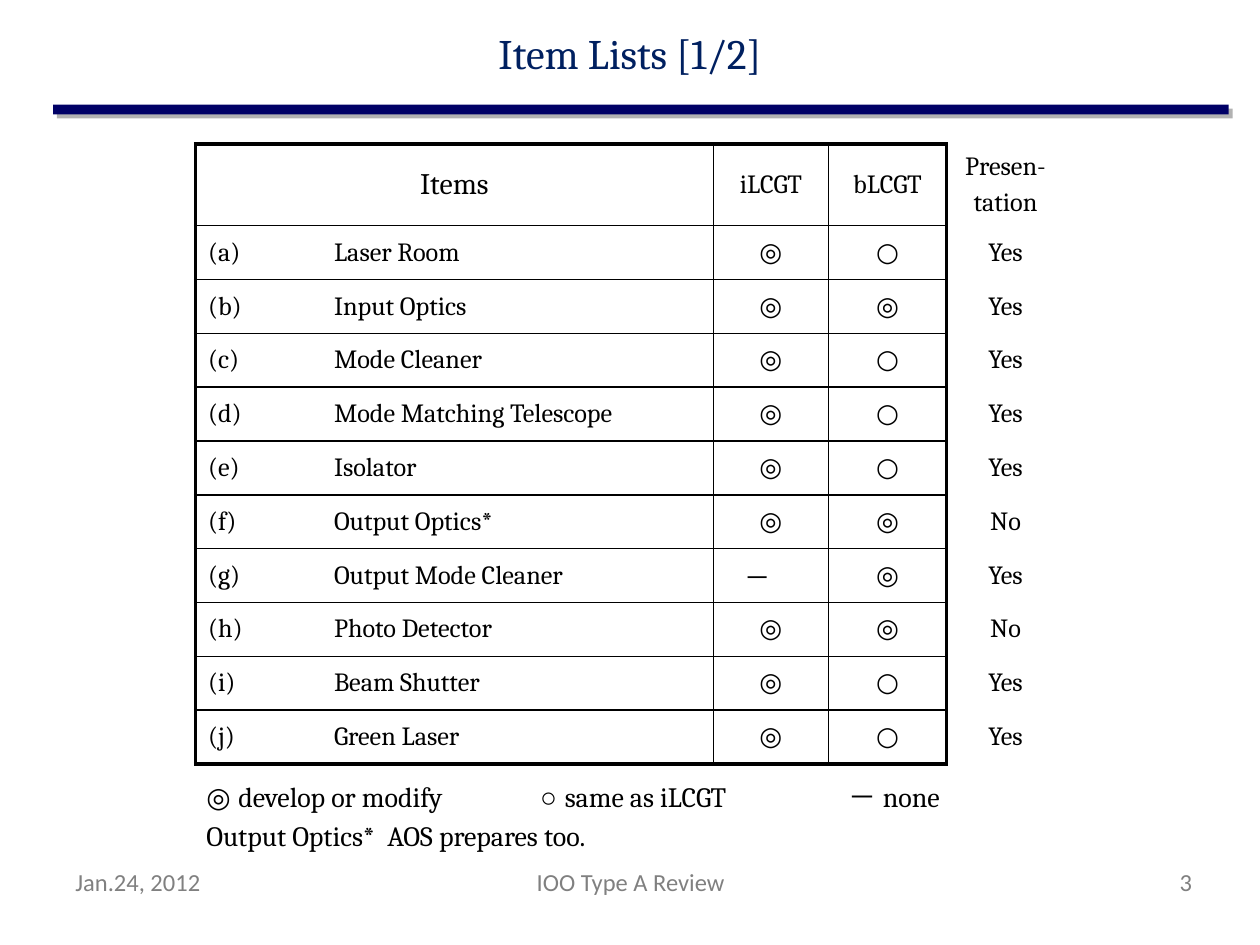
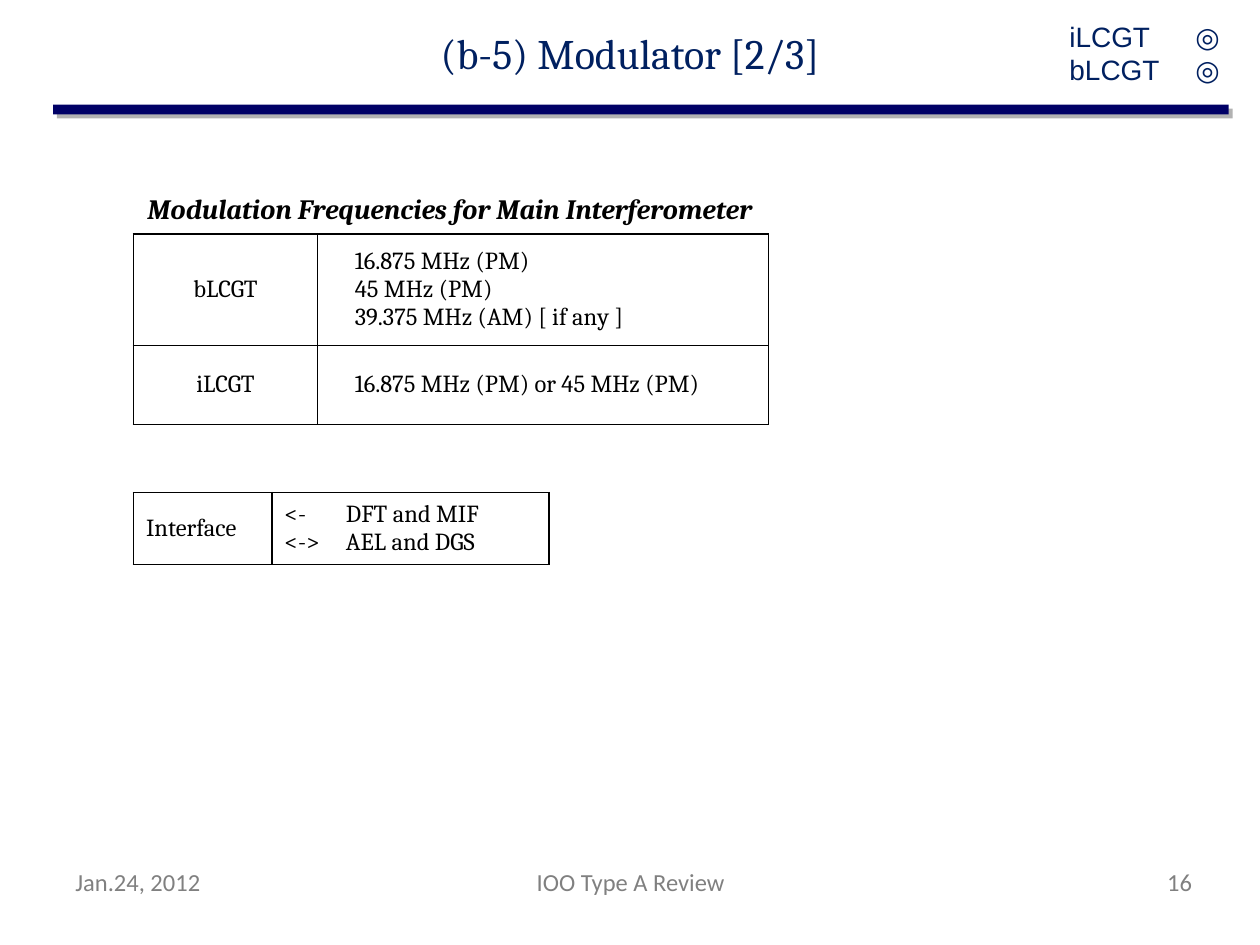
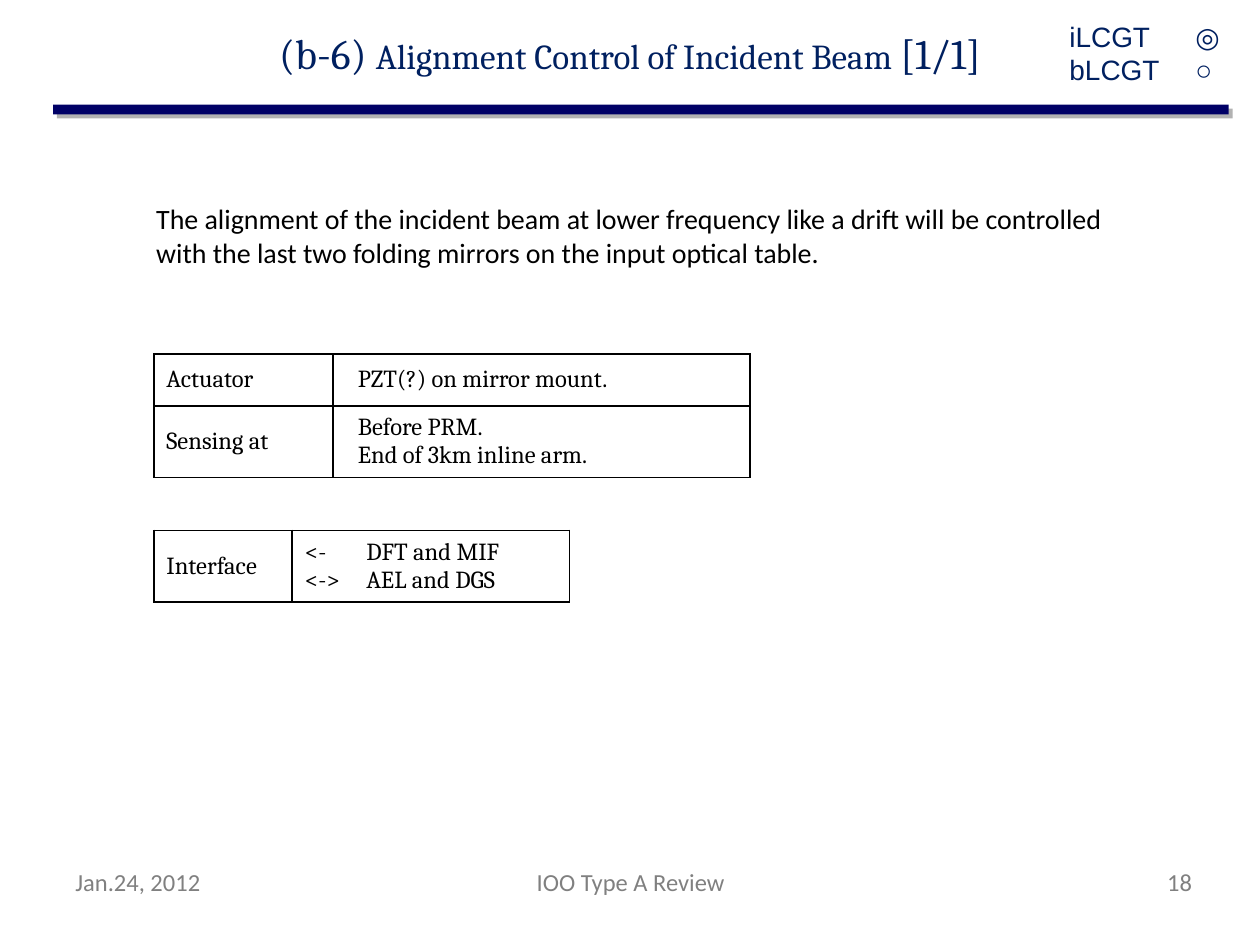
import dataclasses
import typing

import lxml.etree
import pptx
import pptx.dml.color
import pptx.enum.shapes
import pptx.enum.text
import pptx.oxml.ns
import pptx.util

Cm = pptx.util.Cm
Align = pptx.enum.text.PP_ALIGN
Anchor = pptx.enum.text.MSO_ANCHOR
qn = pptx.oxml.ns.qn


@dataclasses.dataclass(frozen=True)
class Theme:
    """Colours, fonts and type sizes of the whole deck."""
    navy: str = "002060"
    band: str = "000066"
    band_shadow: str = "B2B2B2"
    ink: str = "000000"
    muted: str = "808080"
    serif: str = "Cambria"
    sans: str = "Calibri"
    badge_font: str = "Arial"
    title: int = 24
    long_title: int = 20
    items_head: int = 17
    items: int = 15
    body: int = 16
    cell: int = 14
    footer: int = 14
    thin: float = 1
    thick: float = 2.25


class Box(typing.NamedTuple):
    """A rectangle in centimetres."""
    left: float
    top: float
    width: float
    height: float

    def sub(self, dx, dy, width, height):
        """Return a box placed from this box's top left corner."""
        return Box(self.left + dx, self.top + dy, width, height)

    def lengths(self):
        """Return the four measures as lengths."""
        return [Cm(value) for value in self]


THEME = Theme()
PAGE = Box(0, 0, 25.4, 19.05)
HEADER = PAGE.sub(0, 0, 25.4, 2.13)
FOOTER = PAGE.sub(1.27, 17.35, 23.01, 1.32)

DEVELOP, SAME, NONE = "◎", "○", "－　"
ITEMS = [
    ("(a)\tLaser Room", DEVELOP, SAME, "Yes"),
    ("(b)\tInput Optics", DEVELOP, DEVELOP, "Yes"),
    ("(c)\tMode Cleaner", DEVELOP, SAME, "Yes"),
    ("(d)\tMode Matching Telescope", DEVELOP, SAME, "Yes"),
    ("(e)\tIsolator", DEVELOP, SAME, "Yes"),
    ("(f)\tOutput Optics*", DEVELOP, DEVELOP, "No"),
    ("(g)\tOutput Mode Cleaner", NONE, DEVELOP, "Yes"),
    ("(h)\tPhoto Detector", DEVELOP, DEVELOP, "No"),
    ("(i)\tBeam Shutter", DEVELOP, SAME, "Yes"),
    ("(j)\tGreen Laser", DEVELOP, SAME, "Yes"),
]


def rgb(value):
    """Return a colour object for a hex string."""
    return pptx.dml.color.RGBColor.from_string(value)


def write(frame, text, size=THEME.cell, font=THEME.serif, color=THEME.ink, bold=False,
          italic=False, align=Align.LEFT, indent=0, tabs=(), gap=0):
    """Fill a frame with lines, each a string or a list of (text, overrides) runs."""
    lines = text if isinstance(text, list) else [text]
    for number, line in enumerate(lines):
        paragraph = frame.add_paragraph() if number else frame.paragraphs[0]
        paragraph.alignment = align
        if number and gap:
            paragraph.space_before = pptx.util.Pt(gap)
        properties = paragraph._p.get_or_add_pPr()
        if indent:
            properties.set("marL", str(Cm(indent)))
            properties.set("indent", "0")
        if tabs:
            stops = lxml.etree.SubElement(properties, qn("a:tabLst"))
            for stop in tabs:
                lxml.etree.SubElement(stops, qn("a:tab"), pos=str(Cm(stop)), algn="l")
        for words, changes in [(line, {})] if isinstance(line, str) else line:
            run = paragraph.add_run()
            run.text = words
            run.font.size = pptx.util.Pt(changes.get("size", size))
            run.font.name = changes.get("font", font)
            run.font.color.rgb = rgb(color)
            run.font.bold = bold
            run.font.italic = italic


def add_text(slide, box, text, anchor=Anchor.TOP, **style):
    """Add a wrapping text box."""
    frame = slide.shapes.add_textbox(*box.lengths()).text_frame
    frame.word_wrap = True
    frame.vertical_anchor = anchor
    write(frame, text, **style)


def add_bar(slide, box, color):
    """Add a plain filled rectangle."""
    bar = slide.shapes.add_shape(pptx.enum.shapes.MSO_SHAPE.RECTANGLE, *box.lengths())
    bar.shadow.inherit = False
    bar.fill.solid()
    bar.fill.fore_color.rgb = rgb(color)
    bar.line.fill.background()


def set_borders(cell, widths):
    """Draw the left, right, top and bottom lines of a cell, zero for none."""
    properties = cell._tc.get_or_add_tcPr()
    for position, (side, width) in enumerate(zip("LRTB", widths)):
        line = lxml.etree.Element(qn(f"a:ln{side}"), w=str(pptx.util.Pt(width)))
        if width:
            fill = lxml.etree.SubElement(line, qn("a:solidFill"))
            lxml.etree.SubElement(fill, qn("a:srgbClr"), val=THEME.ink)
        else:
            lxml.etree.SubElement(line, qn("a:noFill"))
        properties.insert(position, line)


def add_grid(slide, box, widths, heights, rows, style_of, borders_of):
    """Add a table whose cell styles and borders follow from row and column."""
    table = slide.shapes.add_table(len(rows), len(widths), *box.lengths()).table
    table.first_row = table.horz_banding = False
    for column, width in zip(table.columns, widths):
        column.width = Cm(width)
    for row, height in zip(table.rows, heights):
        row.height = Cm(height)
    for r, texts in enumerate(rows):
        for c, text in enumerate(texts):
            cell = table.cell(r, c)
            cell.vertical_anchor = Anchor.MIDDLE
            cell.fill.background()
            set_borders(cell, borders_of(r, c))
            write(cell.text_frame, text, **style_of(r, c))


def add_items_table(slide, box):
    """Add the item list with its unframed presentation column."""
    rows = [("Items", "iLCGT", "bLCGT", ["Presen-", "tation"])] + ITEMS
    marks = [2.32, 2.38, 2.38]
    head = 1.65
    last = len(rows) - 1

    def style_of(r, c):
        if r and c == 0:
            return dict(size=THEME.items, tabs=[2.54])
        size = THEME.items if r or c else THEME.items_head
        return dict(size=size, align=Align.CENTER, gap=3)

    def borders_of(r, c):
        if c == 3:
            return THEME.thick, 0, 0, 0
        return (THEME.thin if c else THEME.thick, THEME.thick if c == 2 else THEME.thin,
                THEME.thin if r else THEME.thick, THEME.thick if r == last else THEME.thin)

    add_grid(slide, box, [box.width - sum(marks)] + marks,
             [head] + [(box.height - head) / last] * last, rows, style_of, borders_of)


def add_legend(slide, box):
    """Explain the marks and the asterisk."""
    symbol = dict(font=THEME.badge_font)
    add_text(slide, box.sub(0, 0, box.width, 0.94),
             [[("◎ ", symbol), ("develop or modify", {}), ("\t○ ", symbol),
               ("same as iLCGT\t", {}), ("－ ", symbol), ("none", {})]],
             size=THEME.body, tabs=[6.73, 12.95])
    add_text(slide, box.sub(0, 0.78, 9.65, 0.94), "Output Optics*\tAOS prepares too.",
             size=THEME.body, tabs=[3.65])


def add_facts(slide, box, label_width, heights, rows, label_style, fact_style):
    """Add a thin-lined table of labels and facts."""
    add_grid(slide, box, [label_width, box.width - label_width], heights, rows,
             lambda r, c: fact_style if c else label_style,
             lambda r, c: [THEME.thin] * 4)


def add_interface(slide, box):
    """Add the table of interfacing groups."""
    add_facts(slide, box, 2.79, [box.height],
              [("Interface", ["<-\tDFT and MIF", "<->\tAEL and DGS"])],
              {}, dict(tabs=[1.24]))


def add_header(slide, box, title, marks):
    """Add the title, the band below it and the status badge."""
    band = box.sub(1.07, box.height - 0.02, 23.7, 0.2)
    add_bar(slide, band.sub(0.08, 0.08, band.width, band.height), THEME.band_shadow)
    add_bar(slide, band, THEME.band)
    add_text(slide, box, title, Anchor.MIDDLE, size=THEME.title, color=THEME.navy,
             align=Align.CENTER)
    if marks:
        add_text(slide, box.sub(21.31, 0, 4.09, box.height),
                 [f"{phase}\t{mark}" for phase, mark in zip(("iLCGT", "bLCGT"), marks)],
                 Anchor.MIDDLE, size=THEME.body, font=THEME.badge_font, color=THEME.navy)


def add_footer(slide, box, number):
    """Add the date, the review name and the page number."""
    for left, width, text, align in [
        (0, 5.92, "Jan.24, 2012", Align.LEFT),
        (7.42, 8.05, "IOO Type A Review", Align.CENTER),
        (box.width - 2.11, 2.11, str(number), Align.RIGHT),
    ]:
        add_text(slide, box.sub(left, 0, width, box.height), text, size=THEME.footer,
                 font=THEME.sans, color=THEME.muted, align=align)


def start_slide(deck, title, number, marks=()):
    """Add a slide with everything the slides share."""
    slide = deck.slides.add_slide(deck.slide_layouts[6])
    add_header(slide, HEADER, title, marks)
    add_footer(slide, FOOTER, number)
    return slide


def build_item_list(deck, box):
    """Build the item list slide."""
    slide = start_slide(deck, "Item Lists [1/2]", 3)
    add_items_table(slide, box.sub(3.94, 2.9, 17.52, 12.5))
    add_legend(slide, box.sub(3.91, 15.6, 15.6, 1.72))


def build_modulator(deck, box):
    """Build the modulation frequency slide."""
    slide = start_slide(deck, "(b-5) Modulator [2/3]", 16, (DEVELOP, DEVELOP))
    add_text(slide, box.sub(2.72, 3.73, 13.39, 0.94),
             "Modulation Frequencies for Main Interferometer",
             size=THEME.body, bold=True, italic=True)
    add_facts(slide, box.sub(2.69, 4.72, 12.8, 3.84), 3.71, [2.24, 1.6],
              [("bLCGT", ["16.875 MHz (PM)", "45 MHz (PM)", "39.375 MHz (AM) [ if any ]"]),
               ("iLCGT", "16.875 MHz (PM) or 45 MHz (PM)")],
              dict(align=Align.CENTER), dict(indent=0.5))
    add_interface(slide, box.sub(2.69, 9.93, 8.38, 1.45))


def build_alignment(deck, box):
    """Build the beam alignment slide."""
    title = [[("(b-6) ", {}),
              ("Alignment Control of Incident Beam ", dict(size=THEME.long_title)),
              ("[1/1]", {})]]
    slide = start_slide(deck, title, 18, (DEVELOP, SAME))
    add_text(slide, box.sub(2.9, 3.94, 20.6, 1.63),
             "The alignment of the incident beam at lower frequency like a drift will be "
             "controlled with the last two folding mirrors on the input optical table.",
             size=THEME.body, font=THEME.sans)
    add_facts(slide, box.sub(3.1, 7.14, 12.02, 2.47), 3.61, [1.04, 1.43],
              [("Actuator", "PZT(?) on mirror mount."),
               ("Sensing at", ["Before PRM.", "End of 3km inline arm."])],
              {}, dict(indent=0.25))
    add_interface(slide, box.sub(3.1, 10.69, 8.38, 1.45))


def main():
    """Build and save the deck."""
    deck = pptx.Presentation()
    deck.slide_width, deck.slide_height = Cm(PAGE.width), Cm(PAGE.height)
    for build in (build_item_list, build_modulator, build_alignment):
        build(deck, PAGE)
    deck.save("out.pptx")


if __name__ == "__main__":
    main()
